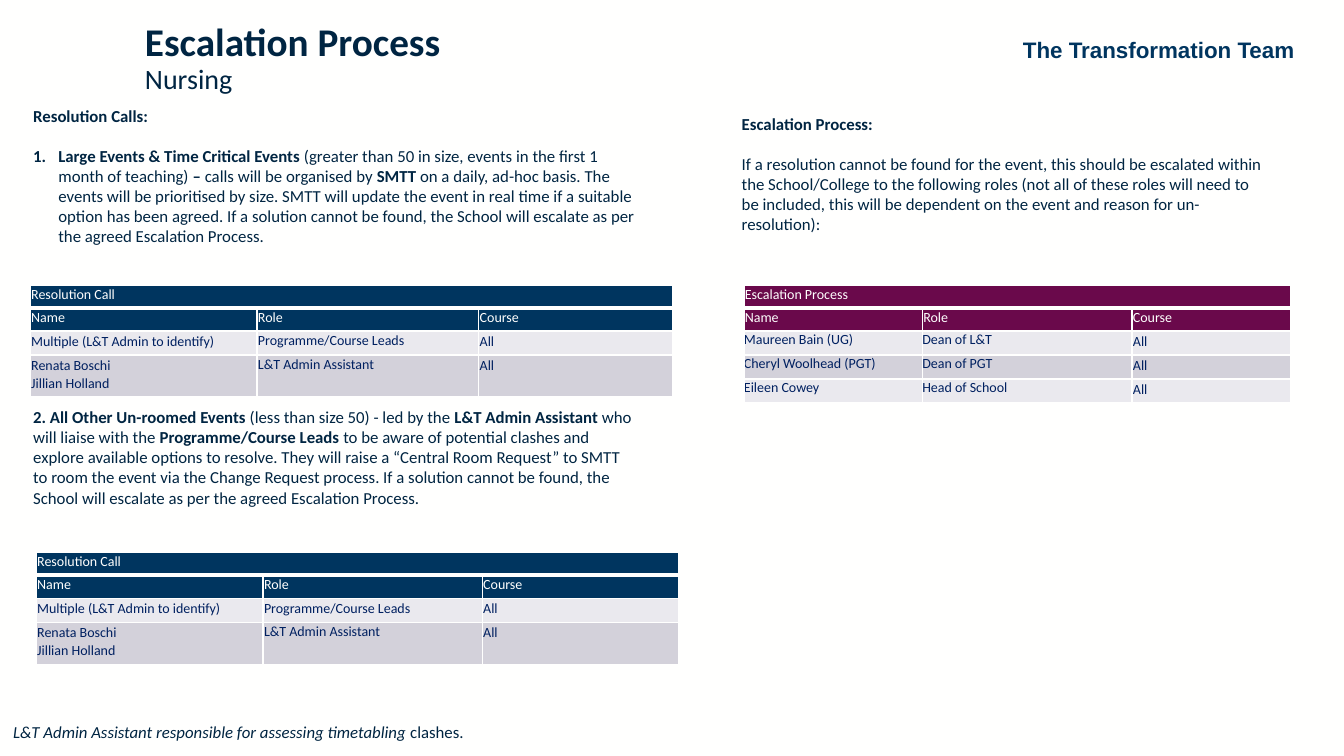
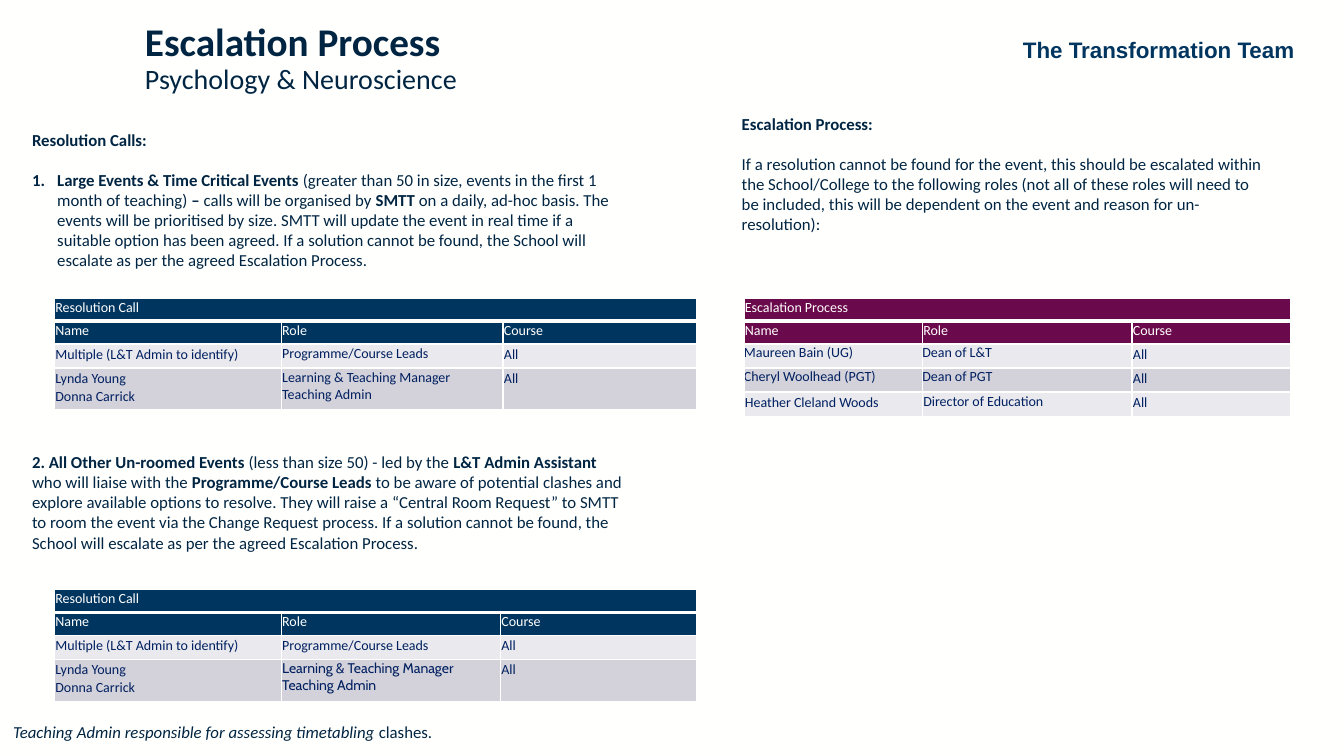
from lxml import etree
from pptx import Presentation
from pptx.dml.color import RGBColor
from pptx.enum.text import MSO_ANCHOR as Anchor, PP_ALIGN as Align
from pptx.oxml.ns import qn
from pptx.util import Pt

PAPER = "FFFFFE"
INK = "002542"
NAVY = "00355F"
PLUM = "6A094B"
CELL_TEXT = "002060"
BANDS = ["EAE9EE", "D3D1DA"]
HEADINGS = ["Name", "Role", "Course"]
LEADS = ["Multiple (L&T Admin to identify)", "Programme/Course Leads", "All"]

LARGE_EVENTS = [
    ("Large Events & Time Critical Events ", "b"),
    ("(greater than 50 in size, events in the first 1 month of teaching) ", ""),
    ("– ", "b"),
    ("calls will be organised by ", ""),
    ("SMTT ", "b"),
    ("on a daily, ad-hoc basis. The events will be prioritised by size. SMTT will "
     "update the event in real time if a suitable option has been agreed. If a solution "
     "cannot be found, the School will escalate as per the agreed Escalation Process.", ""),
]
OTHER_EVENTS = [
    ("2. All Other Un-roomed Events ", "b"),
    ("(less than size 50) - led by the ", ""),
    ("L&T Admin Assistant ", "b"),
    ("who will liaise with the ", ""),
    ("Programme/Course Leads ", "b"),
    ("to be aware of potential clashes and explore available options to resolve. They "
     "will raise a “Central Room Request” to SMTT to room the event via the Change "
     "Request process. If a solution cannot be found, the School will escalate as per "
     "the agreed Escalation Process.", ""),
]
ESCALATION = [(
    "If a resolution cannot be found for the event, this should be escalated within the "
    "School/College to the following roles (not all of these roles will need to be "
    "included, this will be dependent on the event and reason for un-resolution):", "")]

SCHOOLS = [
    {
        "name": "Nursing",
        "contacts": ["Renata Boschi\nJillian Holland", "L&T Admin Assistant", "All"],
        "role_font": "Calibri",
        "last_escalation": ["Eileen Cowey", "Head of School", "All"],
        "last_is_flush": True,
        "calls_box": (16.6, 72, 445, 312),
        "calls_gap": 114.5,
        "first_table": (21.6, 203.8),
        "second_table": (25.9, 394.6),
        "footer": "L&T Admin Assistant",
    },
    {
        "name": "Psychology & Neuroscience",
        "contacts": ["Lynda Young\nDonna Carrick",
                     "Learning & Teaching Manager\nTeaching Admin", "All"],
        "role_font": "Cabin",
        "last_escalation": ["Heather Cleland Woods", "Director of Education", "All"],
        "last_is_flush": False,
        "calls_box": (15.8, 89, 440.6, 327),
        "calls_gap": 129.7,
        "first_table": (38.9, 213.1),
        "second_table": (38.9, 421.2),
        "footer": "Teaching Admin",
    },
]


def write_runs(paragraph, runs, size=12, colour=INK, font="Calibri"):
    """Add (text, style) runs, where style holds b for bold and i for italic."""
    for text, style in runs:
        run = paragraph.add_run()
        run.text = text
        run.font.name = font
        run.font.size = Pt(size)
        run.font.bold = "b" in style
        run.font.italic = "i" in style
        run.font.color.rgb = RGBColor.from_string(colour)


def add_text_frame(slide, left, top, width, height):
    box = slide.shapes.add_textbox(Pt(left), Pt(top), Pt(width), Pt(height))
    box.text_frame.word_wrap = True
    return box.text_frame


presentation = Presentation()
presentation.slide_width = Pt(960)
presentation.slide_height = Pt(540)
background = presentation.slide_master.background.fill
background.solid()
background.fore_color.rgb = RGBColor.from_string(PAPER)

for school in SCHOOLS:
    slide = presentation.slides.add_slide(presentation.slide_layouts[6])

    paragraph = add_text_frame(slide, 716.4, 22.3, 222.5, 26.6).paragraphs[0]
    paragraph.alignment = Align.CENTER
    write_runs(paragraph, [("The Transformation Team", "b")], 16, NAVY, "Arial")

    frame = add_text_frame(slide, 96.5, 0, 304.6, 84.2)
    frame.vertical_anchor = Anchor.MIDDLE
    write_runs(frame.paragraphs[0], [("Escalation Process", "b")], 28)
    write_runs(frame.add_paragraph(), [(school["name"], "")], 20)
    for paragraph in frame.paragraphs:
        paragraph.line_spacing = 0.9

    frame = add_text_frame(slide, *school["calls_box"])
    write_runs(frame.paragraphs[0], [("Resolution Calls:", "b")])
    paragraph = frame.add_paragraph()
    properties = paragraph._p.get_or_add_pPr()
    properties.set("marL", str(Pt(18)))
    properties.set("indent", str(-Pt(18)))
    etree.SubElement(properties, qn("a:buFont"), typeface="+mj-lt")
    etree.SubElement(properties, qn("a:buAutoNum"), type="arabicPeriod")
    paragraph.space_before = Pt(14)
    write_runs(paragraph, LARGE_EVENTS)
    paragraph = frame.add_paragraph()
    paragraph.space_before = Pt(school["calls_gap"])
    write_runs(paragraph, OTHER_EVENTS)

    frame = add_text_frame(slide, 522.7, 77.8, 390.2, 108.7)
    write_runs(frame.paragraphs[0], [("Escalation Process:", "b")])
    paragraph = frame.add_paragraph()
    paragraph.space_before = Pt(14)
    write_runs(paragraph, ESCALATION)

    paragraph = add_text_frame(slide, 2.2, 511.9, 531.4, 21.6).paragraphs[0]
    write_runs(paragraph, [
        (school["footer"] + " responsible for assessing timetabling ", "i"), ("clashes.", "")])

    # Each body row: cells, whether name and role sit flush, anchor, role font
    contacts = school["contacts"]
    first_calls = [(LEADS, False, Anchor.TOP, "Calibri"),
                   (contacts, False, Anchor.TOP, "Calibri")]
    second_calls = [(LEADS, False, Anchor.BOTTOM, "Calibri"),
                    (contacts, False, Anchor.TOP, school["role_font"])]
    escalation = [
        (["Maureen Bain (UG)", "Dean of L&T", "All"], True, Anchor.TOP, "Calibri"),
        (["Cheryl Woolhead (PGT)", "Dean of PGT", "All"], True, Anchor.TOP, "Calibri"),
        (school["last_escalation"], school["last_is_flush"], Anchor.TOP, "Calibri"),
    ]
    tables = [
        ("Resolution Call", NAVY, school["first_table"], [162, 158.4, 138.6], first_calls),
        ("Resolution Call", NAVY, school["second_table"], [162, 156.6, 140.4], second_calls),
        ("Escalation Process", PLUM, (531.4, school["first_table"][1]),
         [127.4, 149.8, 113], escalation),
    ]
    for title, header_fill, (left, top), widths, body in tables:
        header = [(cells, False, Anchor.BOTTOM, "Calibri")
                  for cells in ([title, "", ""], HEADINGS)]
        rows = header + body
        heights = [16, 16] + [30 if "\n" in cells[0] else 17 for cells, *_ in body]
        table = slide.shapes.add_table(
            len(rows), 3, Pt(left), Pt(top), Pt(sum(widths)), Pt(sum(heights))).table
        table.first_row = table.horz_banding = False
        for column, width in zip(table.columns, widths):
            column.width = Pt(width)
        table.cell(0, 0).merge(table.cell(0, 2))

        for row_index, (texts, flush, anchor, role_font) in enumerate(rows):
            table.rows[row_index].height = Pt(heights[row_index])
            is_header = row_index < 2
            for column_index, text in enumerate(texts):
                cell = table.cell(row_index, column_index)
                flush_cell = flush and column_index < 2
                inset = 0 if flush_cell else 0.7
                cell.margin_left = cell.margin_right = cell.margin_top = Pt(inset)
                cell.margin_bottom = Pt(0 if flush_cell else 3.6)
                cell.vertical_anchor = Anchor.BOTTOM if flush and not flush_cell else anchor
                cell.fill.solid()
                cell.fill.fore_color.rgb = RGBColor.from_string(
                    header_fill if is_header else BANDS[row_index % 2])

                cell_properties = cell._tc.get_or_add_tcPr()
                thick_side = {0: "B", 1: "T"}.get(row_index)
                for position, side in enumerate("LRTB"):
                    line = etree.Element(
                        qn("a:ln" + side), w=str(Pt(3 if side == thick_side else 1)))
                    line_fill = etree.SubElement(line, qn("a:solidFill"))
                    etree.SubElement(line_fill, qn("a:srgbClr"), val=PAPER)
                    cell_properties.insert(position, line)

                if not text:
                    continue
                frame = cell.text_frame
                for line_index, line_text in enumerate(text.split("\n")):
                    paragraph = frame.add_paragraph() if line_index else frame.paragraphs[0]
                    if not is_header and column_index != 1 and not flush_cell:
                        paragraph.line_spacing = 1.07
                    write_runs(paragraph, [(line_text, "")], 10,
                               PAPER if is_header else CELL_TEXT,
                               role_font if column_index == 1 else "Calibri")

presentation.save("out.pptx")
